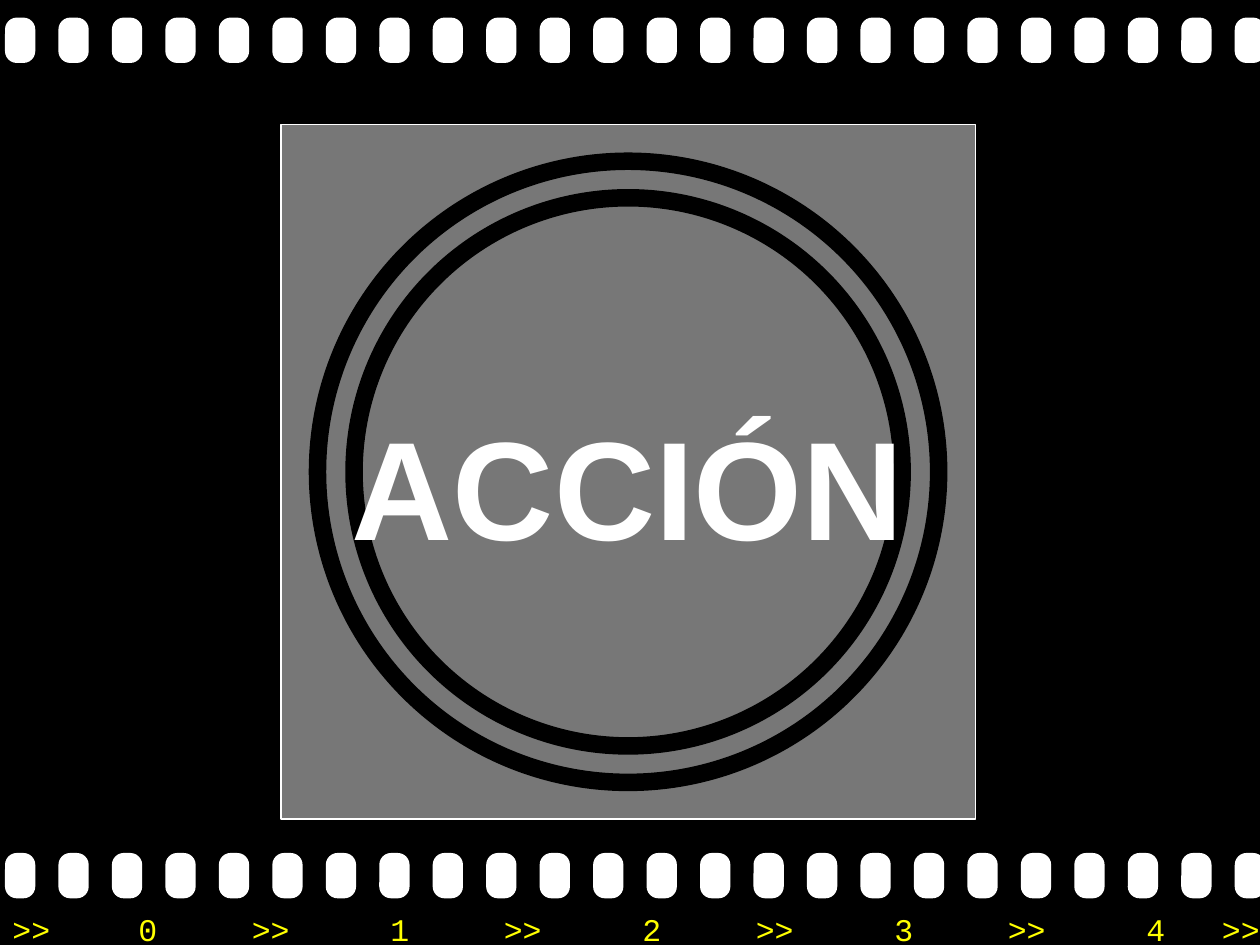
from dataclasses import dataclass

from lxml import etree
from pptx import Presentation
from pptx import util as u
from pptx.dml.color import RGBColor
from pptx.enum import shapes, text
from pptx.oxml import ns

COLUMNS, ROWS = 100, 75
CELL = u.Inches(0.1)

BLACK = RGBColor(0x00, 0x00, 0x00)
GREY = RGBColor(0x77, 0x77, 0x77)
WHITE = RGBColor(0xFF, 0xFF, 0xFF)
YELLOW = RGBColor(0xFF, 0xFF, 0x00)

HOLES_PER_STRIP = 24
FIRST_HOLE, LAST_HOLE = 0.4, 98
STRIP_ROWS = (67.7, 1.4)
FRAME_COUNT = 5
FRAME_PITCH = 20


@dataclass(frozen=True)
class Box:
    column: float
    row: float
    columns: float
    rows: float

    def place(self) -> tuple[int, ...]:
        return tuple(round(n * CELL) for n in (self.column, self.row, self.columns, self.rows))


@dataclass(frozen=True)
class Figure:
    kind: shapes.MSO_SHAPE
    box: Box
    fill: RGBColor | None = None
    line: RGBColor | None = None
    weight: float = 0
    corner: float | None = None


@dataclass(frozen=True)
class Lettering:
    font: str
    size: float
    color: RGBColor
    bold: bool = False


def draw_figure(slide, figure: Figure) -> None:
    shape = slide.shapes.add_shape(figure.kind, *figure.box.place())
    shape.shadow.inherit = False
    if figure.corner is not None:
        shape.adjustments[0] = figure.corner
    if figure.fill is None:
        shape.fill.background()
    else:
        shape.fill.solid()
        shape.fill.fore_color.rgb = figure.fill
    if figure.line is None:
        shape.line.fill.background()
    else:
        shape.line.color.rgb = figure.line
        shape.line.width = u.Pt(figure.weight)


def draw_strip(slide, row: float) -> None:
    pitch = (LAST_HOLE - FIRST_HOLE) / (HOLES_PER_STRIP - 1)
    for index in range(HOLES_PER_STRIP):
        box = Box(FIRST_HOLE + index * pitch, row, 2.4, 3.6)
        draw_figure(slide, Figure(shapes.MSO_SHAPE.ROUNDED_RECTANGLE, box, WHITE, corner=0.39))


def add_text(slide, box: Box, words: list[str], lettering: Lettering):
    frame = slide.shapes.add_textbox(*box.place()).text_frame
    frame.word_wrap = True
    paragraph = frame.paragraphs[0]
    for word in words:
        run = paragraph.add_run()
        run.text = word
        run.font.name = lettering.font
        run.font.size = u.Pt(lettering.size)
        run.font.bold = lettering.bold
        run.font.color.rgb = lettering.color
    return frame


def set_tab_stops(paragraph, columns: list[float]) -> None:
    properties = paragraph._p.get_or_add_pPr()
    tabs = etree.SubElement(properties, ns.qn("a:tabLst"))
    for column in columns:
        etree.SubElement(tabs, ns.qn("a:tab"), pos=str(round(column * CELL)), algn="l")


def draw_frame_numbers(slide) -> None:
    words, stops = [">>"], []
    for number in range(FRAME_COUNT):
        digit_stop = 10 + number * FRAME_PITCH
        is_last = number == FRAME_COUNT - 1
        words += [f"\t{number}", "\t>>"]
        stops += [digit_stop, digit_stop + (6 if is_last else 9)]
    frame = add_text(slide, Box(0, 71.7, 102, 4), words, Lettering("Courier New", 18, YELLOW))
    set_tab_stops(frame.paragraphs[0], stops)


def draw_title(slide) -> None:
    frame = add_text(slide, Box(22.2, 19.7, 55.3, 37.5), ["ACCIÓN"],
                     Lettering("Arial", 80, WHITE, bold=True))
    frame.margin_left = frame.margin_right = frame.margin_top = frame.margin_bottom = 0
    frame.vertical_anchor = text.MSO_ANCHOR.MIDDLE
    frame.paragraphs[0].alignment = text.PP_ALIGN.CENTER


def main() -> None:
    presentation = Presentation()
    presentation.slide_width = COLUMNS * CELL
    presentation.slide_height = ROWS * CELL
    slide = presentation.slides.add_slide(presentation.slide_layouts[6])
    slide.background.fill.solid()
    slide.background.fill.fore_color.rgb = BLACK

    for row in STRIP_ROWS:
        draw_strip(slide, row)
    draw_frame_numbers(slide)

    screen = Box(22.3, 9.9, 55.1, 55.1)
    draw_figure(slide, Figure(shapes.MSO_SHAPE.RECTANGLE, screen, GREY, WHITE, 0.75))
    for diameter in (43.5, 49.3):
        inset = (screen.columns - diameter) / 2
        ring = Box(screen.column + inset, screen.row + inset, diameter, diameter)
        draw_figure(slide, Figure(shapes.MSO_SHAPE.OVAL, ring, line=BLACK, weight=10))
    draw_title(slide)

    presentation.save("out.pptx")


if __name__ == "__main__":
    main()
